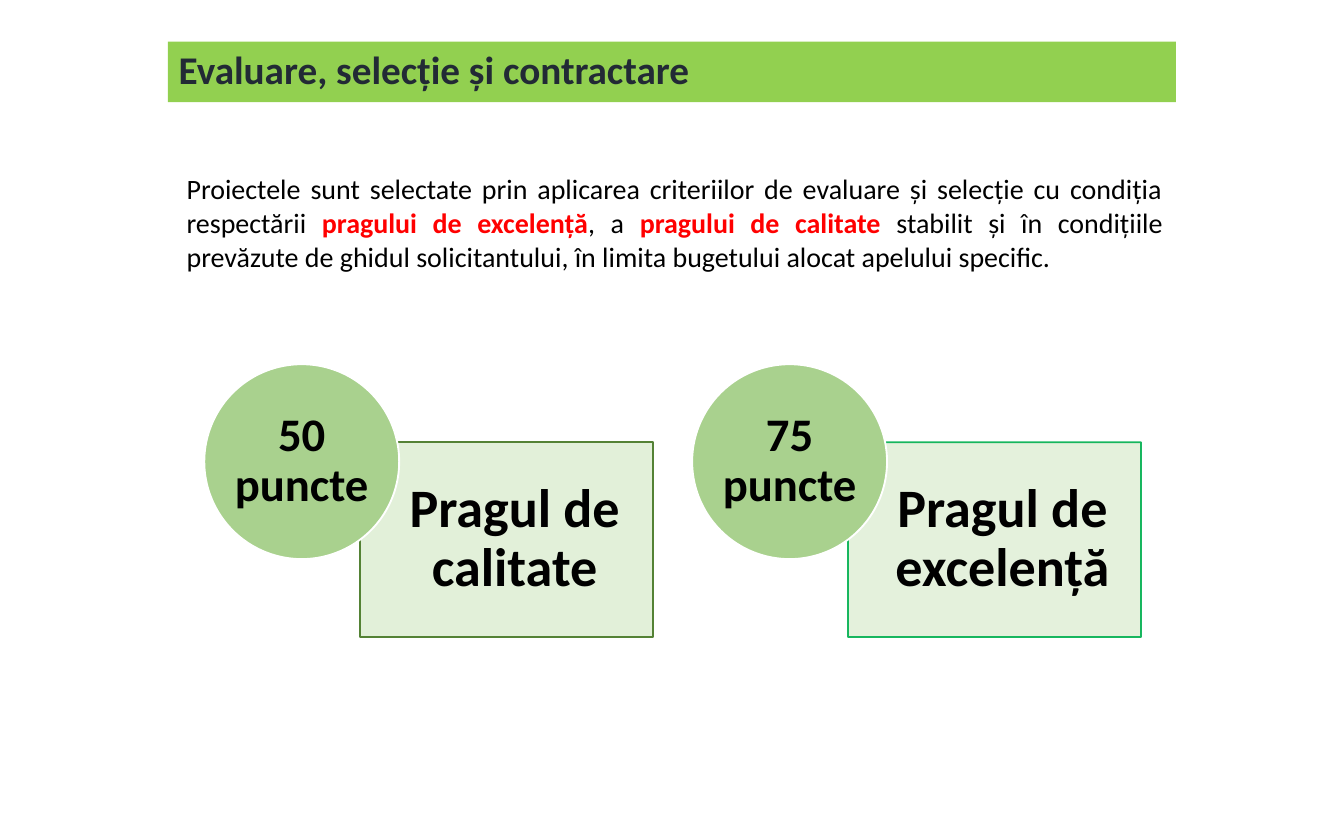
from dataclasses import dataclass

from lxml import etree
from pptx import Presentation
from pptx.dml.color import RGBColor
from pptx.enum import shapes, text
from pptx.oxml.ns import qn
from pptx.util import Inches, Pt


@dataclass(frozen=True)
class Theme:
    font: str = "Calibri"
    banner: str = "92D050"
    heading: str = "222A35"
    body: str = "000000"
    emphasis: str = "FF0000"
    card: str = "E2F0D9"
    quality_line: str = "548235"
    excellence_line: str = "00B050"
    badge: str = "A9D18E"
    badge_line: str = "FFFFFF"
    heading_size: int = 21
    body_size: int = 15
    card_size: int = 29
    badge_size: int = 25


THEME = Theme()


def set_opacity(fill_format, shape, percent):
    colors = shape.element.spPr.findall(".//" + qn("a:srgbClr"))
    for color in colors:
        etree.SubElement(color, qn("a:alpha")).set("val", str(percent * 1000))


def style_run(run, size, color, bold):
    run.font.name = THEME.font
    run.font.size = Pt(size)
    run.font.bold = bold
    run.font.color.rgb = RGBColor.from_string(color)


def set_margins(frame, left, top, right, bottom):
    frame.margin_left = Inches(left)
    frame.margin_top = Inches(top)
    frame.margin_right = Inches(right)
    frame.margin_bottom = Inches(bottom)


def add_label(slide, kind, box, label, fill, size, color, margins, line=None,
              alignment=text.PP_ALIGN.CENTER):
    shape = slide.shapes.add_shape(kind, *map(Inches, box))
    shape.shadow.inherit = False
    shape.fill.solid()
    shape.fill.fore_color.rgb = RGBColor.from_string(fill)
    if line:
        shape.line.color.rgb = RGBColor.from_string(line)
        shape.line.width = Pt(1)
    else:
        shape.line.fill.background()
    frame = shape.text_frame
    frame.word_wrap = True
    frame.vertical_anchor = text.MSO_ANCHOR.MIDDLE
    set_margins(frame, *margins)
    frame.text = label
    paragraph = frame.paragraphs[0]
    paragraph.alignment = alignment
    paragraph.line_spacing = 0.9
    style_run(paragraph.runs[0], size, color, True)
    return shape


def add_banner(slide, box, title):
    add_label(slide, shapes.MSO_SHAPE.RECTANGLE, box, title, THEME.banner,
              THEME.heading_size, THEME.heading, (0.08, 0.04, 0.08, 0.04),
              alignment=text.PP_ALIGN.LEFT)


def add_introduction(slide, box, parts):
    frame = slide.shapes.add_textbox(*map(Inches, box)).text_frame
    frame.word_wrap = True
    set_margins(frame, 0.1, 0.05, 0.1, 0.05)
    paragraph = frame.paragraphs[0]
    paragraph.alignment = text.PP_ALIGN.JUSTIFY
    for content, emphasized in parts:
        run = paragraph.add_run()
        run.text = content
        color = THEME.emphasis if emphasized else THEME.body
        style_run(run, THEME.body_size, color, emphasized)


def add_threshold(slide, box, score, name, line, opacity):
    left, top, width, height = box
    diameter = 1.45
    card_width = 2.18
    card_box = (left + width - card_width, top + height - diameter,
                card_width, diameter)
    card = add_label(slide, shapes.MSO_SHAPE.RECTANGLE, card_box, name,
                     THEME.card, THEME.card_size, THEME.body,
                     (0.35, 0.23, 0.23, 0.23), line)
    if opacity < 100:
        set_opacity(card.fill, card, opacity)
    add_label(slide, shapes.MSO_SHAPE.OVAL, (left, top, diameter, diameter),
              score, THEME.badge, THEME.badge_size, THEME.body,
              (0, 0, 0, 0), THEME.badge_line)


def main():
    presentation = Presentation()
    presentation.slide_width = Inches(10)
    presentation.slide_height = Inches(6.25)
    slide = presentation.slides.add_slide(presentation.slide_layouts[6])

    add_banner(slide, (1.25, 0.31, 7.5, 0.45),
               "Evaluare, selecție și contractare")
    add_introduction(slide, (1.29, 1.23, 7.46, 0.85), [
        ("Proiectele sunt selectate prin aplicarea criteriilor de evaluare "
         "și selecție cu condiția respectării ", False),
        ("pragului de excelență", True),
        (", a ", False),
        ("pragului de calitate ", True),
        ("stabilit și în condițiile prevăzute de ghidul solicitantului, "
         "în limita bugetului alocat apelului specific.", False),
    ])
    thresholds = [
        ("50 puncte", "Pragul de calitate", THEME.quality_line, 100),
        ("75 puncte", "Pragul de excelență", THEME.excellence_line, 90),
    ]
    for index, threshold in enumerate(thresholds):
        add_threshold(slide, (1.52 + index * 3.63, 2.71, 3.34, 2.03),
                      *threshold)

    presentation.save("out.pptx")


if __name__ == "__main__":
    main()
